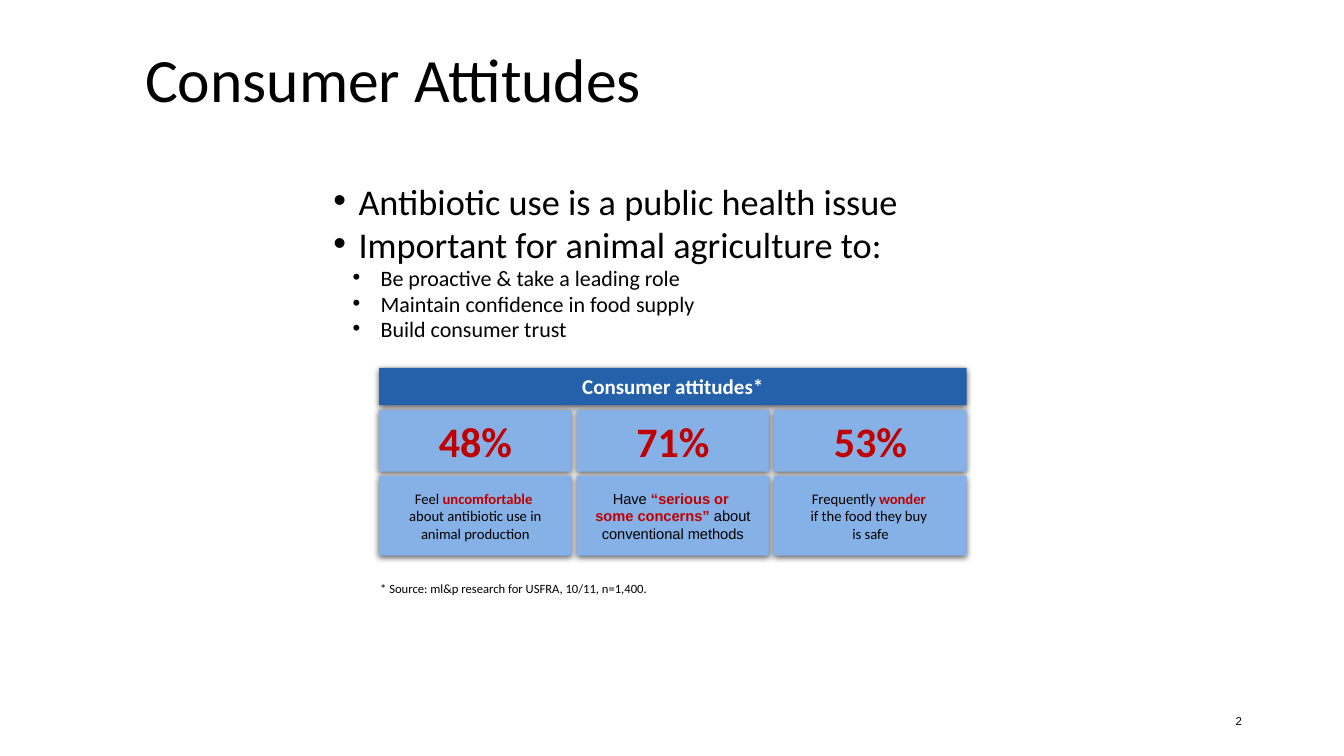
from lxml.etree import SubElement
from pptx import Presentation
from pptx.dml.color import RGBColor
from pptx.enum.shapes import MSO_SHAPE
from pptx.enum.text import MSO_ANCHOR, PP_ALIGN
from pptx.oxml.ns import qn
from pptx.util import Pt

BLACK, WHITE, RED = "000000", "FFFFFF", "C00000"
DARK_BLUE, LIGHT_BLUE = "2461AA", "86B1E6"


def color(value):
    return RGBColor.from_string(value)


def write(paragraph, text, size=18, font="Calibri", fill=BLACK, bold=False,
          align=PP_ALIGN.LEFT, line_spacing=None, space_before=0):
    """Add text to a paragraph; each newline becomes a line break."""
    paragraph.alignment = align
    paragraph.space_before = Pt(space_before)
    if line_spacing:
        paragraph.line_spacing = line_spacing
    for index, line in enumerate(text.split("\n")):
        if index:
            paragraph.add_line_break()
        if line:
            run = paragraph.add_run()
            run.text = line
            run.font.size = Pt(size)
            run.font.name = font
            run.font.bold = bold
            run.font.color.rgb = color(fill)


def add_bullet(paragraph, indent, hanging):
    properties = paragraph._p.get_or_add_pPr()
    properties.set("marL", str(Pt(indent)))
    properties.set("indent", str(-Pt(hanging)))
    SubElement(properties, qn("a:buFont"), typeface="Arial")
    SubElement(properties, qn("a:buChar"), char="•")


def add_shadow(shape):
    effects = SubElement(shape._element.spPr, qn("a:effectLst"))
    shadow = SubElement(effects, qn("a:outerShdw"), blurRad=str(Pt(4.5)),
                        dist=str(Pt(1.5)), dir="5400000", rotWithShape="0")
    shade = SubElement(shadow, qn("a:srgbClr"), val=BLACK)
    SubElement(shade, qn("a:alpha"), val="63000")


class SlideBuilder:
    def __init__(self, slide):
        self.slide = slide
        self.accent = {"fill": RED, "bold": True}

    def text_box(self, left, top, width, height, anchor=MSO_ANCHOR.TOP, wrap=True):
        """Add an empty text box and return its text frame."""
        shape = self.slide.shapes.add_textbox(Pt(left), Pt(top), Pt(width), Pt(height))
        frame = shape.text_frame
        frame.word_wrap = wrap
        frame.vertical_anchor = anchor
        return frame

    def label(self, text, left, top, width, height, anchor=MSO_ANCHOR.MIDDLE,
              wrap=True, **style):
        frame = self.text_box(left, top, width, height, anchor, wrap)
        write(frame.paragraphs[0], text, **style)

    def bullets(self, items, levels, left, top, width, height):
        """Add a list of (level, text) items, formatted by level."""
        frame = self.text_box(left, top, width, height)
        for index, (level, text) in enumerate(items):
            size, gap, indent, hanging = levels[level]
            paragraph = frame.add_paragraph() if index else frame.paragraphs[0]
            paragraph.level = level
            write(paragraph, text, size=size, line_spacing=0.7,
                  space_before=gap if index else 0)
            add_bullet(paragraph, indent, hanging)
            paragraph.font.size = Pt(size)

    def panel(self, parts, left, top, width, height, background, **style):
        """Add a shadowed rectangle holding (text, format) parts."""
        shape = self.slide.shapes.add_shape(
            MSO_SHAPE.RECTANGLE, Pt(left), Pt(top), Pt(width), Pt(height))
        shape.fill.solid()
        shape.fill.fore_color.rgb = color(background)
        shape.line.fill.background()
        add_shadow(shape)
        frame = shape.text_frame
        frame.word_wrap = True
        frame.vertical_anchor = MSO_ANCHOR.MIDDLE
        for text, part_style in parts:
            write(frame.paragraphs[0], text, align=PP_ALIGN.CENTER,
                  **style, **part_style)


def main():
    presentation = Presentation()
    presentation.slide_width = Pt(960)
    presentation.slide_height = Pt(540)
    builder = SlideBuilder(presentation.slides.add_slide(presentation.slide_layouts[6]))

    builder.label("Consumer Attitudes", 96.5, 41.8, 486, 34.5, size=44, line_spacing=0.9)
    builder.bullets(
        [(0, "Antibiotic use is a public health issue"),
         (0, "Important for animal agriculture to:"),
         (1, "Be proactive & take a leading role"),
         (1, "Maintain confidence in food supply"),
         (1, "Build consumer trust")],
        {0: (25.9, 9.3, 18, 18), 1: (15.7, 5, 33.8, 20)},
        231, 133, 486, 119.5)
    builder.label("2", 678.2, 500.4, 216, 28.8, size=8.2, font="Arial",
                  align=PP_ALIGN.RIGHT)
    builder.label("* Source: ml&p research for USFRA, 10/11, n=1,400.",
                  264.5, 411.5, 206.6, 18, anchor=MSO_ANCHOR.TOP, wrap=False, size=9)

    findings = [
        ("48%", "Calibri", "Feel ", "uncomfortable \n",
         "about antibiotic use in animal production"),
        ("71%", "Arial", "Have ", "“serious or \nsome concerns” ",
         "about conventional methods"),
        ("53%", "Calibri", "Frequently ", "wonder \n",
         "if the food they buy \nis safe"),
    ]
    grid_left, panel_width, gap = 270.8, 137.5, 3.6
    pitch = panel_width + gap
    header_width = len(findings) * pitch - gap
    builder.panel([("Consumer attitudes*", {"fill": WHITE, "bold": True})],
                  grid_left, 262.8, header_width, 26.6, DARK_BLUE, size=15)
    for column, (share, font, opening, stress, ending) in enumerate(findings):
        left = grid_left + column * pitch
        builder.panel([(share, builder.accent)], left, 293, panel_width, 43.9,
                      LIGHT_BLUE, size=30)
        builder.panel([(opening, {}), (stress, builder.accent), (ending, {})],
                      left, 340, panel_width, 56.9, LIGHT_BLUE, size=10.5, font=font)

    presentation.save("out.pptx")


if __name__ == "__main__":
    main()
